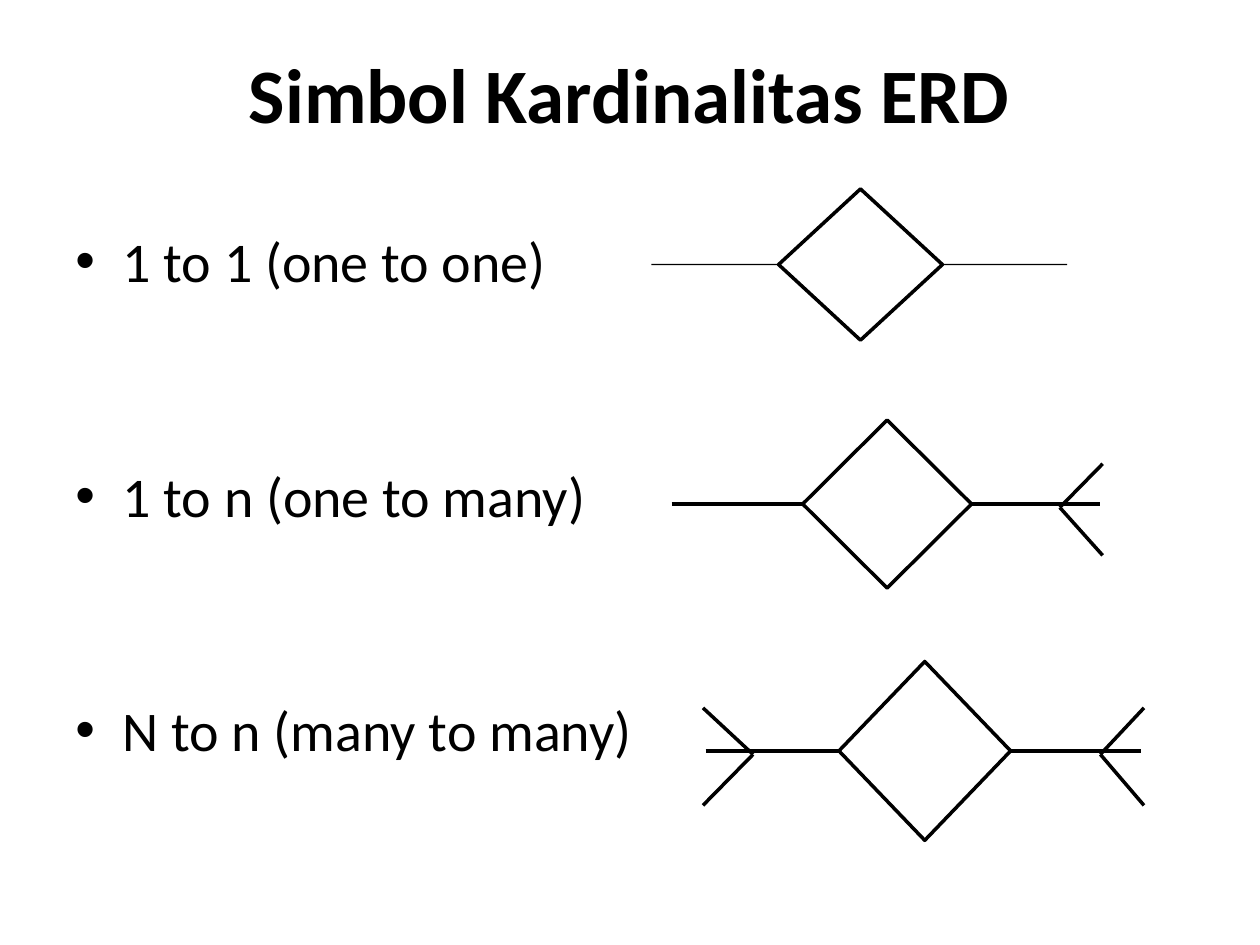
from dataclasses import dataclass

import pptx
import pptx.dml.color
import pptx.enum.shapes
import pptx.enum.text
import pptx.oxml
import pptx.oxml.ns
import pptx.util

Pt = pptx.util.Pt


@dataclass(frozen=True)
class Theme:
    """Colours, font, type sizes and line widths of the slide."""
    ink: str = "000000"
    paper: str = "FFFFFF"
    font: str = "Calibri"
    title: float = 44
    body: float = 32
    thin: float = 0.75
    thick: float = 2


THEME = Theme()


def rgb(value):
    """Return a colour object for a hex string."""
    return pptx.dml.color.RGBColor.from_string(value)


def add_bullet(p, indent):
    """Give a paragraph a round bullet with a hanging indent."""
    pPr = p._p.get_or_add_pPr()
    pPr.set("marL", str(Pt(indent)))
    pPr.set("indent", str(-Pt(indent)))
    for tag, key, value in (("a:buFont", "typeface", "Arial"), ("a:buChar", "char", "•")):
        element = pptx.oxml.parse_xml(f'<{tag} {pptx.oxml.ns.nsdecls("a")} {key}="{value}"/>')
        pPr.append(element)


def add_text(s, box, lines, size, bold=False, align="LEFT", anchor="TOP", indent=0, gap=0):
    """Write paragraphs in a text box, bulleted when an indent is given."""
    tf = s.shapes.add_textbox(*map(Pt, box)).text_frame
    tf.word_wrap = True
    tf.vertical_anchor = getattr(pptx.enum.text.MSO_ANCHOR, anchor)
    for i, line in enumerate(lines):
        p = tf.paragraphs[0] if i == 0 else tf.add_paragraph()
        if indent:
            add_bullet(p, indent)
        p.alignment = getattr(pptx.enum.text.PP_ALIGN, align)
        p.space_before = Pt(gap if i else 0)
        r = p.add_run()
        r.text = line
        r.font.name = THEME.font
        r.font.size = Pt(size)
        r.font.bold = bold
        r.font.color.rgb = rgb(THEME.ink)


def add_line(s, start, end, width):
    """Draw a straight line without a shadow."""
    line = s.shapes.add_connector(
        pptx.enum.shapes.MSO_CONNECTOR.STRAIGHT, *map(Pt, (*start, *end)))
    line.line.color.rgb = rgb(THEME.ink)
    line.line.width = Pt(width)
    effects = pptx.oxml.parse_xml(f'<a:effectLst {pptx.oxml.ns.nsdecls("a")}/>')
    line._element.spPr.append(effects)
    return line


def add_crow_foot(s, tip_x, mid_y, depth, height):
    """Draw the two slanted toes of a many end; depth points to the vertex."""
    vertex = (tip_x + depth, mid_y + 2)
    for rise in (-0.26, 0.285):
        add_line(s, vertex, (tip_x, vertex[1] + rise * height), THEME.thick)


def add_relation(s, box, arm_width, many_left=False, many_right=False):
    """Draw a relation diamond with its two arms and any crow's feet."""
    left, top, width, height = box
    right, mid_y = left + width, top + height / 2
    x, w = left + 0.306 * width, 0.394 * width
    sp = s.shapes.add_shape(
        pptx.enum.shapes.MSO_SHAPE.FLOWCHART_DECISION, *map(Pt, (x, top, w, height)))
    sp.shadow.inherit = False
    sp.fill.solid()
    sp.fill.fore_color.rgb = rgb(THEME.paper)
    sp.line.color.rgb = rgb(THEME.ink)
    sp.line.width = Pt(THEME.thick)
    add_line(s, (left, mid_y), (x, mid_y), arm_width).end_connect(sp, 1)
    add_line(s, (x + w, mid_y), (right, mid_y), arm_width).begin_connect(sp, 3)
    if many_right:
        add_crow_foot(s, right + 1.5, mid_y, -0.1 * width, height)
    if many_left:
        add_crow_foot(s, left - 1.5, mid_y, 0.115 * width, height)


def main():
    """Build the cardinality slide and save it."""
    prs = pptx.Presentation()
    prs.slide_width, prs.slide_height = Pt(720), Pt(540)
    s = prs.slides.add_slide(prs.slide_layouts[6])
    add_text(s, (36, 21.6, 648, 62.6), ["Simbol Kardinalitas ERD"], THEME.title,
             bold=True, align="CENTER", anchor="MIDDLE")
    add_text(s, (36, 126, 648, 356.4),
             ["1 to 1 (one to one)", "1 to n (one to many)", "N to n (many to many)"],
             THEME.body, indent=27, gap=95.5)
    add_relation(s, (372.2, 108, 237.6, 86.4), THEME.thin)
    add_relation(s, (383.8, 240, 244.8, 96), THEME.thick, many_right=True)
    add_relation(s, (403.2, 378, 249, 102.2), THEME.thick, many_left=True, many_right=True)
    prs.save("out.pptx")


if __name__ == "__main__":
    main()
